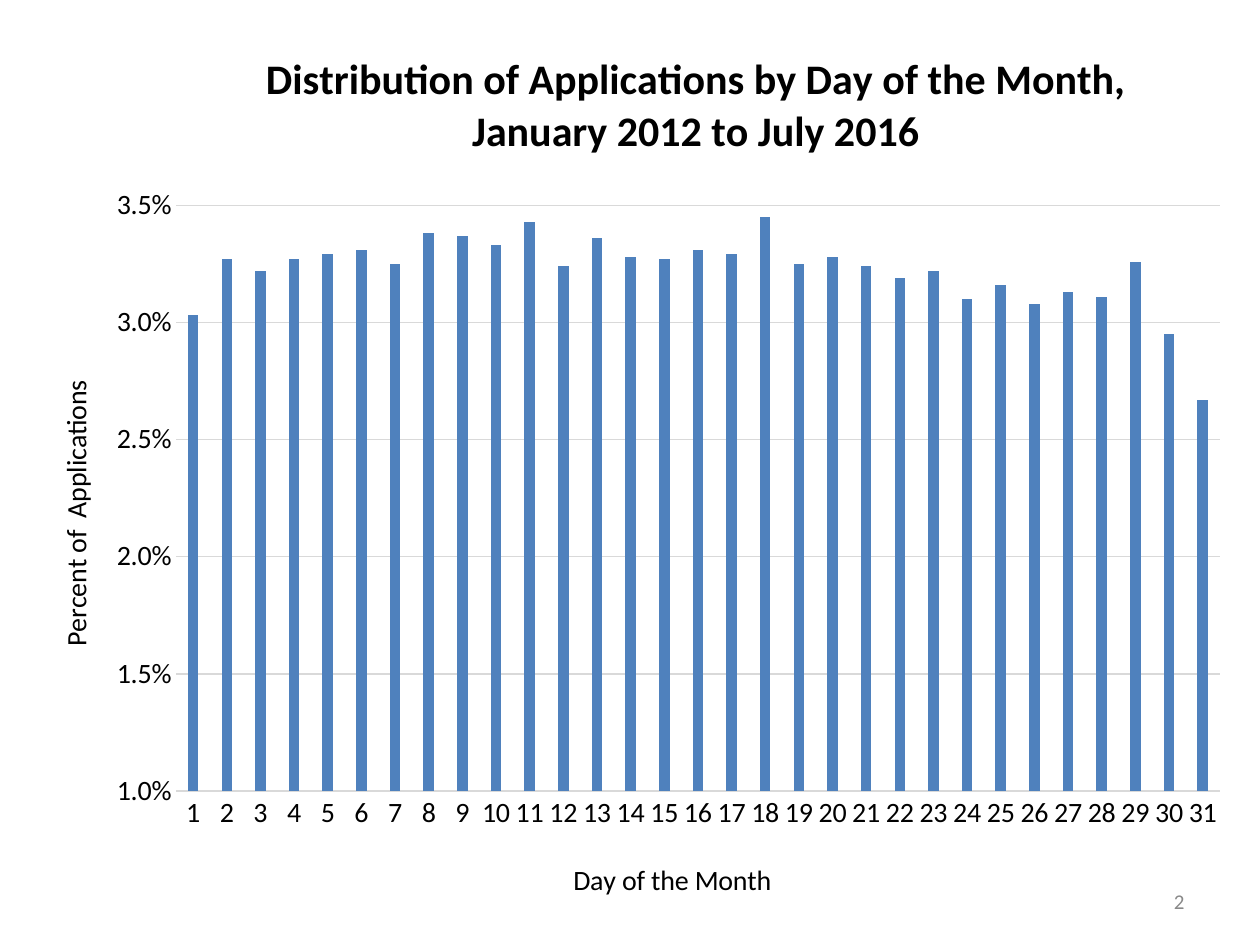
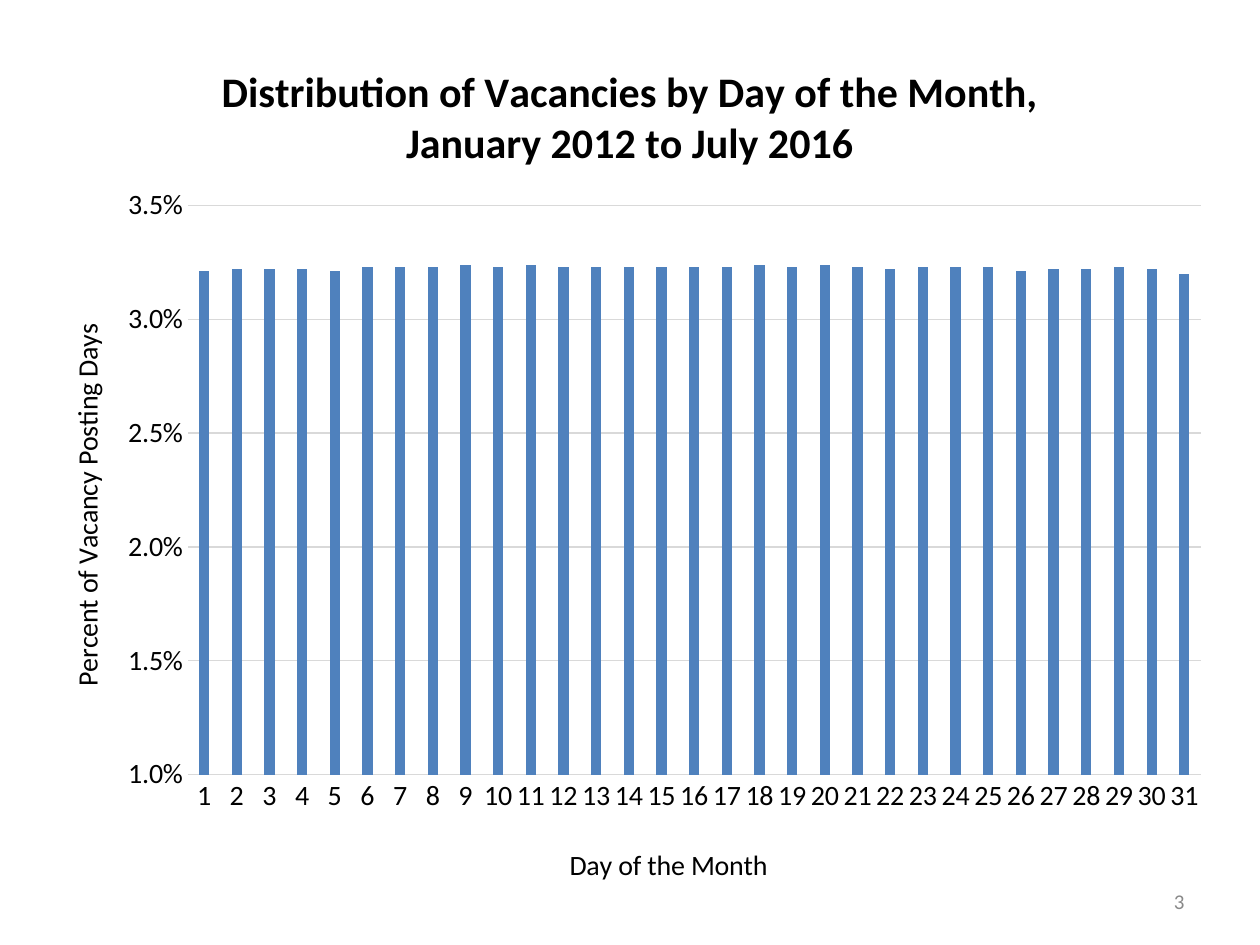
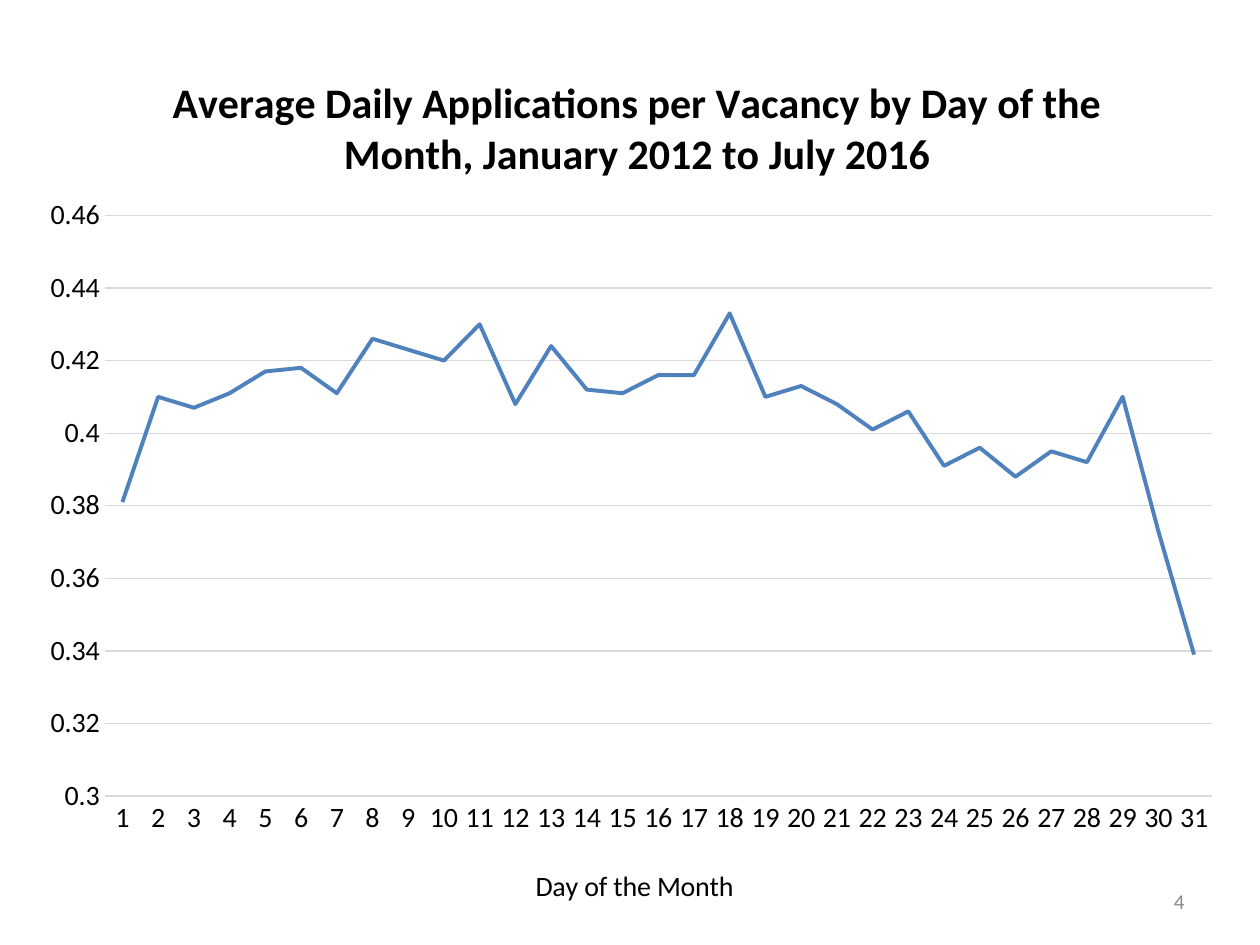
from lxml import etree
from pptx import Presentation
from pptx.chart.data import CategoryChartData
from pptx.dml.color import RGBColor
from pptx.enum.chart import XL_CHART_TYPE, XL_TICK_MARK
from pptx.enum.text import MSO_ANCHOR, PP_ALIGN
from pptx.oxml.ns import qn
from pptx.util import Inches, Pt

COLUMN = XL_CHART_TYPE.COLUMN_CLUSTERED
LINE = XL_CHART_TYPE.LINE
NO_TICK = XL_TICK_MARK.NONE
MIDDLE = MSO_ANCHOR.MIDDLE
RIGHT = PP_ALIGN.RIGHT

FONT = "Calibri"
COLORS = {"text": "000000", "series": "4F81BD", "grid": "D9D9D9", "number": "898989"}
DAYS = [str(day) for day in range(1, 32)]
FIRST_NUMBER = 2
NUMBER_FRAME = (7.17, 6.95, 2.33, 0.4)
DAY_TITLE = "Day of the Month"
PERCENT_SCALE = (0.01, 0.035, 0.005, "0.0%")

CHARTS = [
    {
        "kind": COLUMN,
        "title": ["Distribution of Applications by Day of the Month,", "January 2012 to July 2016"],
        "value_title": "Percent of  Applications",
        "scale": PERCENT_SCALE,
        "frame": (0.16, 0.25, 9.72, 7.05),
        "plot": (1.4, 1.63, 8.28, 4.65),
        "title_at": (2.08, 0.39),
        "day_title_at": (4.51, 6.79),
        "value_title_at": (0.41, 2.98),
        "values": [
            0.0303, 0.0327, 0.0322, 0.0327, 0.0329, 0.0331, 0.0325, 0.0338,
            0.0337, 0.0333, 0.0343, 0.0324, 0.0336, 0.0328, 0.0327, 0.0331,
            0.0329, 0.0345, 0.0325, 0.0328, 0.0324, 0.0319, 0.0322, 0.031,
            0.0316, 0.0308, 0.0313, 0.0311, 0.0326, 0.0295, 0.0267,
        ],
    },
    {
        "kind": COLUMN,
        "title": ["Distribution of Vacancies by Day of the Month,", "January 2012 to July 2016"],
        "value_title": "Percent of Vacancy Posting Days",
        "scale": PERCENT_SCALE,
        "frame": (0.25, 0.25, 9.47, 6.92),
        "plot": (1.49, 1.63, 8.04, 4.52),
        "title_at": (1.73, 0.49),
        "day_title_at": (4.48, 6.67),
        "value_title_at": (0.5, 2.53),
        "values": [
            0.0321, 0.0322, 0.0322, 0.0322, 0.0321, 0.0323, 0.0323, 0.0323,
            0.0324, 0.0323, 0.0324, 0.0323, 0.0323, 0.0323, 0.0323, 0.0323,
            0.0323, 0.0324, 0.0323, 0.0324, 0.0323, 0.0322, 0.0323, 0.0323,
            0.0323, 0.0321, 0.0322, 0.0322, 0.0323, 0.0322, 0.032,
        ],
    },
    {
        "kind": LINE,
        "title": ["Average Daily Applications per Vacancy by Day of the Month, January 2012 to July 2016"],
        "value_title": None,
        "scale": (0.3, 0.46, 0.02, "General"),
        "frame": (0.2, 0.23, 9.61, 7.11),
        "plot": (0.83, 1.71, 8.79, 4.61),
        "title_at": (1.31, 0.53),
        "day_title_at": (4.21, 6.84),
        "values": [
            0.381, 0.41, 0.407, 0.411, 0.417, 0.418, 0.411, 0.426,
            0.423, 0.42, 0.43, 0.408, 0.424, 0.412, 0.411, 0.416,
            0.416, 0.433, 0.41, 0.413, 0.408, 0.401, 0.406, 0.391,
            0.396, 0.388, 0.395, 0.392, 0.41, 0.373, 0.339,
        ],
    },
]


def color(name):
    return RGBColor.from_string(COLORS[name])


def style_font(font, size, name="text", bold=False):
    font.name = FONT
    font.size = Pt(size)
    font.bold = bold
    font.color.rgb = color(name)


def style_line(line, name, width):
    line.color.rgb = color(name)
    line.width = Pt(width)


def set_layout(element, frame, place):
    left, top, width, height = frame
    settings = [("xMode", "edge"), ("yMode", "edge")]
    if len(place) == 4:
        settings.insert(0, ("layoutTarget", "inner"))
    settings += [("x", (place[0] - left) / width), ("y", (place[1] - top) / height)]
    if len(place) == 4:
        settings += [("w", place[2] / width), ("h", place[3] / height)]
    for old in element.findall(qn("c:layout")):
        element.remove(old)
    layout = etree.Element(qn("c:layout"))
    manual = etree.SubElement(layout, qn("c:manualLayout"))
    for tag, value in settings:
        etree.SubElement(manual, qn("c:" + tag)).set("val", str(value))
    text = element.find(qn("c:tx"))
    element.insert(0 if text is None else element.index(text) + 1, layout)


def write_title(title, lines, size, bold, frame, place):
    text_frame = title.text_frame
    for index, line in enumerate(lines):
        para = text_frame.add_paragraph() if index else text_frame.paragraphs[0]
        style_font(para.font, size, bold=bold)
        span = para.add_run()
        span.text = line
        style_font(span.font, size, bold=bold)
    set_layout(title.element, frame, place)


def style_axes(chart, content):
    frame = content["frame"]
    days, values = chart.category_axis, chart.value_axis
    for axis in (days, values):
        axis.major_tick_mark = axis.minor_tick_mark = NO_TICK
        style_font(axis.tick_labels.font, 16)
    style_line(days.format.line, "grid", 0.75)
    write_title(days.axis_title, [DAY_TITLE], 16, False, frame, content["day_title_at"])

    low, high, step, number_format = content["scale"]
    values.minimum_scale, values.maximum_scale, values.major_unit = low, high, step
    values.tick_labels.number_format = number_format
    values.tick_labels.number_format_is_linked = False
    values.format.line.fill.background()
    values.has_major_gridlines = True
    style_line(values.major_gridlines.format.line, "grid", 0.75)
    if content["value_title"]:
        title = values.axis_title
        write_title(title, [content["value_title"]], 16, False, frame, content["value_title_at"])
        body = title.element.find(".//" + qn("a:bodyPr"))
        body.set("rot", "-5400000")
        body.set("vert", "horz")


def add_day_chart(page, content):
    data = CategoryChartData()
    data.categories = DAYS
    data.add_series("Series 1", content["values"])
    frame = content["frame"]
    chart = page.shapes.add_chart(content["kind"], *map(Inches, frame), data).chart
    style_font(chart.font, 16)
    chart.has_legend = False
    write_title(chart.chart_title, content["title"], 24, True, frame, content["title_at"])
    set_layout(chart.element.find(".//" + qn("c:plotArea")), frame, content["plot"])
    style_axes(chart, content)

    plot = chart.plots[0]
    plot.vary_by_categories = False
    series = plot.series[0]
    if content["kind"] == COLUMN:
        plot.gap_width, plot.overlap = 219, -27
        series.format.fill.solid()
        series.format.fill.fore_color.rgb = color("series")
    else:
        series.smooth = False
        style_line(series.format.line, "series", 2.25)


def add_page_number(page, number):
    box = page.shapes.add_textbox(*map(Inches, NUMBER_FRAME))
    box.text_frame.word_wrap = True
    box.text_frame.vertical_anchor = MIDDLE
    para = box.text_frame.paragraphs[0]
    para.alignment = RIGHT
    span = para.add_run()
    span.text = str(number)
    style_font(span.font, 12, "number")


def main():
    deck = Presentation()
    deck.slide_width, deck.slide_height = Inches(10), Inches(7.5)
    for number, content in enumerate(CHARTS, FIRST_NUMBER):
        page = deck.slides.add_slide(deck.slide_layouts[6])
        add_day_chart(page, content)
        add_page_number(page, number)
    deck.save("out.pptx")


if __name__ == "__main__":
    main()
